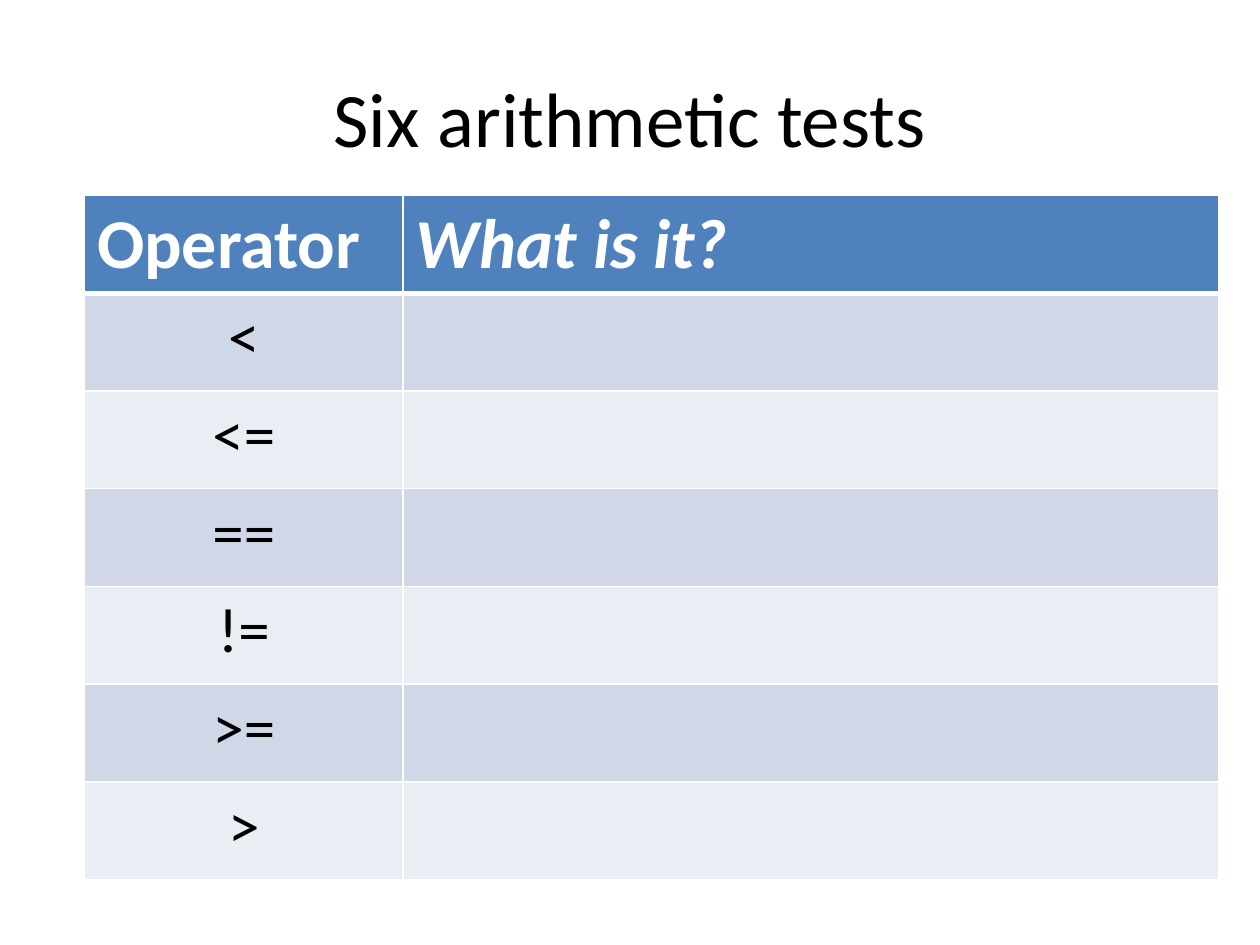
from lxml.etree import SubElement
from pptx import Presentation
from pptx.dml.color import RGBColor
from pptx.enum.text import MSO_ANCHOR, PP_ALIGN
from pptx.oxml.ns import qn
from pptx.util import Inches, Pt


def write(tf, text, size, color="000000", align=PP_ALIGN.LEFT, bold=False, italic=False):
    p = tf.paragraphs[0]
    p.alignment = align
    r = p.add_run()
    r.text = text
    r.font.name = "Calibri"
    r.font.size = Pt(size)
    r.font.bold = bold
    r.font.italic = italic
    r.font.color.rgb = RGBColor.from_string(color)


def add_borders(cell, top=1, bottom=1):
    """Draw white cell borders; widths are in points."""
    tcPr = cell._tc.get_or_add_tcPr()
    for side, width in (("L", 1), ("R", 1), ("T", top), ("B", bottom)):
        ln = SubElement(tcPr, qn(f"a:ln{side}"), w=str(Pt(width)))
        SubElement(SubElement(ln, qn("a:solidFill")), qn("a:srgbClr"), val="FFFFFF")


prs = Presentation()
prs.slide_width, prs.slide_height = Inches(10), Inches(7.5)
s = prs.slides.add_slide(prs.slide_layouts[5])

title = s.shapes.title
title.left, title.top = Inches(0.5), Inches(0.3)
title.width, title.height = Inches(9), Inches(1.25)
title.text_frame.vertical_anchor = MSO_ANCHOR.MIDDLE
write(title.text_frame, "Six arithmetic tests", 44, align=PP_ALIGN.CENTER)

operators = ["<", "<=", "==", "!=", ">=", ">"]
table = s.shapes.add_table(len(operators) + 1, 2, Inches(0.67), Inches(1.55),
                           Inches(9), Inches(5.43)).table
table.columns[0].width = Inches(2.53)
table.columns[1].width = Inches(6.47)

for i, row in enumerate(table.rows):
    fill = "4F81BD" if i == 0 else ("E9EDF4", "D0D8E8")[i % 2]
    for cell in row.cells:
        add_borders(cell, top=3 if i == 1 else 1, bottom=3 if i == 0 else 1)
        cell.fill.solid()
        cell.fill.fore_color.rgb = RGBColor.from_string(fill)

write(table.cell(0, 0).text_frame, "Operator", 40, "FFFFFF", bold=True)
write(table.cell(0, 1).text_frame, "What is it?", 40, "FFFFFF", bold=True, italic=True)
for i, operator in enumerate(operators, start=1):
    write(table.cell(i, 0).text_frame, operator, 36, align=PP_ALIGN.CENTER)

prs.save("out.pptx")
